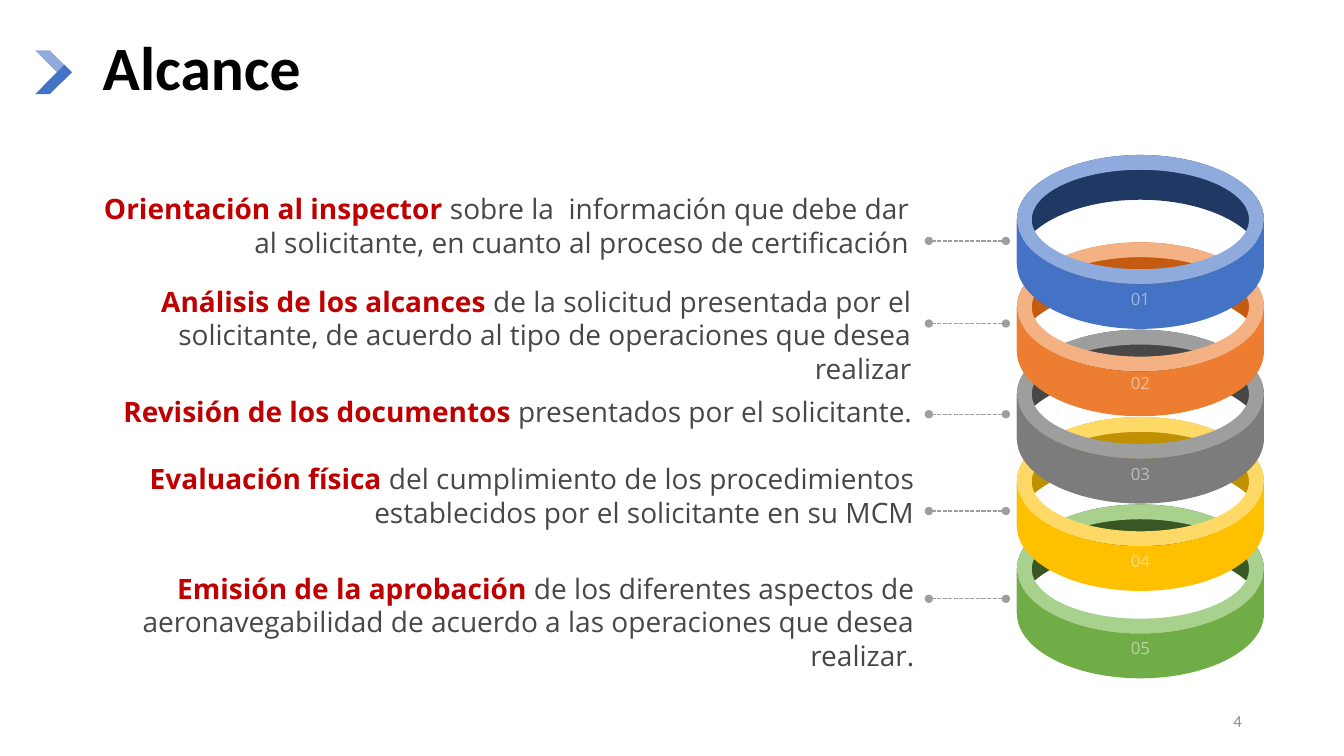
from dataclasses import dataclass

from lxml.etree import Element, SubElement
from pptx import Presentation
from pptx.dml.color import RGBColor
from pptx.enum.dml import MSO_LINE
from pptx.enum.shapes import MSO_CONNECTOR as Link, MSO_SHAPE as Kind
from pptx.enum.text import MSO_ANCHOR as Anchor, MSO_AUTO_SIZE as Fit, PP_ALIGN as Align
from pptx.oxml.ns import qn
from pptx.util import Pt


@dataclass(frozen=True)
class Theme:
    head: str = "Calibri"
    body: str = "Open Sans"
    title: int = 44
    text: int = 20
    small: int = 12
    lead: int = 24
    black: str = "000000"
    white: str = "FFFFFF"
    red: str = "C00000"
    ink: str = "474747"
    line: str = "9E9E9E"
    mute: str = "8C8C8C"
    light: str = "8FAADC"
    blue: str = "4472C4"
    # back, rim and front of each ring, from top to bottom
    rings: tuple = (
        ("203864", "8FAADC", "4472C4"),
        ("C55A11", "F4B183", "ED7D31"),
        ("474747", "9E9E9E", "7C7C7C"),
        ("BF9000", "FFD966", "FFC000"),
        ("385723", "A9D18E", "70AD47"),
    )


def bend(shape):
    """Turn the two long sides of a six-point band into half ellipses."""
    route = shape._element.find(".//" + qn("a:path"))
    dots = [(int(p.get("x")), int(p.get("y"))) for p in route.iter(qn("a:pt"))]
    nodes, pull = list(route), 0.55
    for i in (1, 2, 4, 5):
        (ax, ay), (bx, by) = dots[i - 1], dots[i]
        if i in (1, 4):
            hooks = (ax, ay + pull * (by - ay)), (bx + pull * (ax - bx), by)
        else:
            hooks = (ax + pull * (bx - ax), ay), (bx, by + pull * (ay - by))
        nodes[i].tag = qn("a:cubicBezTo")
        for spot, (x, y) in enumerate(hooks):
            nodes[i].insert(spot, Element(qn("a:pt"), x=str(round(x)), y=str(round(y))))


class Deck:
    def __init__(self, theme):
        self.theme = theme
        self.prs = Presentation()
        self.prs.slide_width, self.prs.slide_height = Pt(960), Pt(540)
        self.slide = self.prs.slides.add_slide(self.prs.slide_layouts[5])
        self.shapes = self.slide.shapes

    def font(self, run, name, size, color, bold=False):
        run.font.name, run.font.size, run.font.bold = name, Pt(size), bold
        run.font.color.rgb = RGBColor.from_string(color)

    def paint(self, shape, color):
        shape.shadow.inherit = False
        shape.fill.solid()
        shape.fill.fore_color.rgb = RGBColor.from_string(color)
        shape.line.fill.background()

    def title(self, text, x, y, w, h):
        box = self.shapes.title
        box.left, box.top, box.width, box.height = Pt(x), Pt(y), Pt(w), Pt(h)
        frame = box.text_frame
        frame.text = text
        frame.auto_size, frame.vertical_anchor = Fit.NONE, Anchor.TOP
        par = frame.paragraphs[0]
        par.alignment, par.line_spacing = Align.LEFT, 0.9
        self.font(par.runs[0], self.theme.head, self.theme.title, self.theme.black, True)

    def box(self, x, y, w, h):
        """Add a right-aligned text box and return its frame."""
        frame = self.shapes.add_textbox(Pt(x), Pt(y), Pt(w), Pt(h)).text_frame
        frame.word_wrap, frame.auto_size = True, Fit.NONE
        frame.paragraphs[0].alignment = Align.RIGHT
        return frame

    def page(self, text, x, y, w, h):
        frame = self.box(x, y, w, h)
        frame.vertical_anchor = Anchor.MIDDLE
        run = frame.paragraphs[0].add_run()
        run.text = text
        self.font(run, self.theme.head, self.theme.small, self.theme.mute)

    def item(self, key, rest, x, y, w, h):
        par = self.box(x, y, w, h).paragraphs[0]
        par.line_spacing = Pt(self.theme.lead)
        for text, color, bold in ((key, self.theme.red, True), (rest, self.theme.ink, False)):
            run = par.add_run()
            run.text = text
            self.font(run, self.theme.body, self.theme.text, color, bold)

    def lead(self, x, end, y):
        """Draw a dashed leader with a dot at both ends."""
        link = self.shapes.add_connector(Link.STRAIGHT, Pt(x), Pt(y), Pt(end), Pt(y))
        line = link.line
        line.color.rgb = RGBColor.from_string(self.theme.line)
        line.width, line.dash_style = Pt(1), MSO_LINE.SQUARE_DOT
        props = link._element.spPr
        for tag in ("a:headEnd", "a:tailEnd"):
            SubElement(props.find(qn("a:ln")), qn(tag), type="oval")
        SubElement(props, qn("a:effectLst"))

    def form(self, color, points):
        dots = [(Pt(x), Pt(y)) for x, y in points]
        pen = self.shapes.build_freeform(*dots[0])
        pen.add_line_segments(dots[1:], close=True)
        shape = pen.convert_to_shape()
        self.paint(shape, color)
        return shape

    def band(self, color, mid, y, wide, high, deep):
        """Draw a curved band; a negative high bulges upward."""
        shape = self.form(color, [
            (mid - wide, y), (mid, y + high), (mid + wide, y),
            (mid + wide, y + deep), (mid, y + high + deep), (mid - wide, y + deep)])
        bend(shape)
        return shape

    def ring(self, label, colors, mid, y, drop):
        """Draw a hollow band around (mid, y), its label lowered by drop."""
        wide, high, deep, edge = 88.2, 46.1, 32, 10.6
        back, rim, front = colors
        self.band(back, mid, y, wide, -high, deep)
        hoop = self.shapes.add_shape(Kind.DONUT, Pt(mid - wide), Pt(y - high),
                                     Pt(2 * wide), Pt(2 * high))
        hoop.adjustments[0] = edge / (2 * high)
        self.paint(hoop, rim)
        frame = self.band(front, mid, y, wide, high, deep).text_frame
        frame.text = label
        frame.vertical_anchor = Anchor.MIDDLE
        frame.margin_left = frame.margin_right = frame.margin_bottom = 0
        frame.margin_top = Pt(drop)
        par = frame.paragraphs[0]
        par.alignment = Align.CENTER
        run = par.runs[0]
        self.font(run, self.theme.body, self.theme.small, self.theme.white)
        tint = run._r.rPr.find(".//" + qn("a:srgbClr"))
        SubElement(tint, qn("a:alpha"), val="50000")

    def mark(self, x, y):
        """Draw the two-tone chevron beside the title."""
        wide, high, arm, tip = 26.2, 31.2, 10.4, 20.8
        mid = y + high / 2
        for color, side in ((self.theme.light, -1), (self.theme.blue, 1)):
            edge = mid + side * high / 2
            self.form(color, [(x, edge), (x + tip, mid - side * 5.4),
                              (x + wide, mid), (x + arm, edge)])


# key words, rest, box top, right edge, height, leader height, label drop
ITEMS = (
    ("Orientación al inspector ",
     "sobre la  información que debe dar al solicitante, en cuanto al proceso de certificación",
     133.2, 656.6, 54, 172.1, 35),
    ("Análisis de los alcances ",
     "de la solicitud presentada por el solicitante, de acuerdo al tipo de operaciones "
     "que desea realizar",
     199.4, 658.1, 54, 231.1, 30),
    ("Revisión de los documentos ", "presentados por el solicitante.",
     277.9, 658.8, 47, 295.9, 35),
    ("Evaluación física ",
     "del cumplimiento de los procedimientos establecidos por el solicitante en su MCM",
     326.2, 660.2, 54, 365, 35),
    ("Emisión de la aprobación ",
     "de los diferentes aspectos de aeronavegabilidad de acuerdo a las operaciones "
     "que desea realizar.",
     404.6, 660.2, 78, 427.7, 35),
)


def main():
    deck = Deck(Theme())
    left, pitch = 66.2, 62.4
    deck.mark(25.2, 36)
    deck.title("Alcance", left, 23, 828, 66.2)
    deck.page("4", 678.2, 500.4, 216, 28.8)
    rows = list(enumerate(zip(ITEMS, deck.theme.rings)))
    for i, (item, colors) in reversed(rows):
        deck.ring(f"{i + 1:02}", colors, 814.6, 156.8 + i * pitch, item[-1])
    for key, rest, top, right, high, level, _ in ITEMS:
        deck.item(key, rest, left, top, right - left, high)
        deck.lead(718.5, 663.5, level)
    deck.prs.save("out.pptx")


if __name__ == "__main__":
    main()
